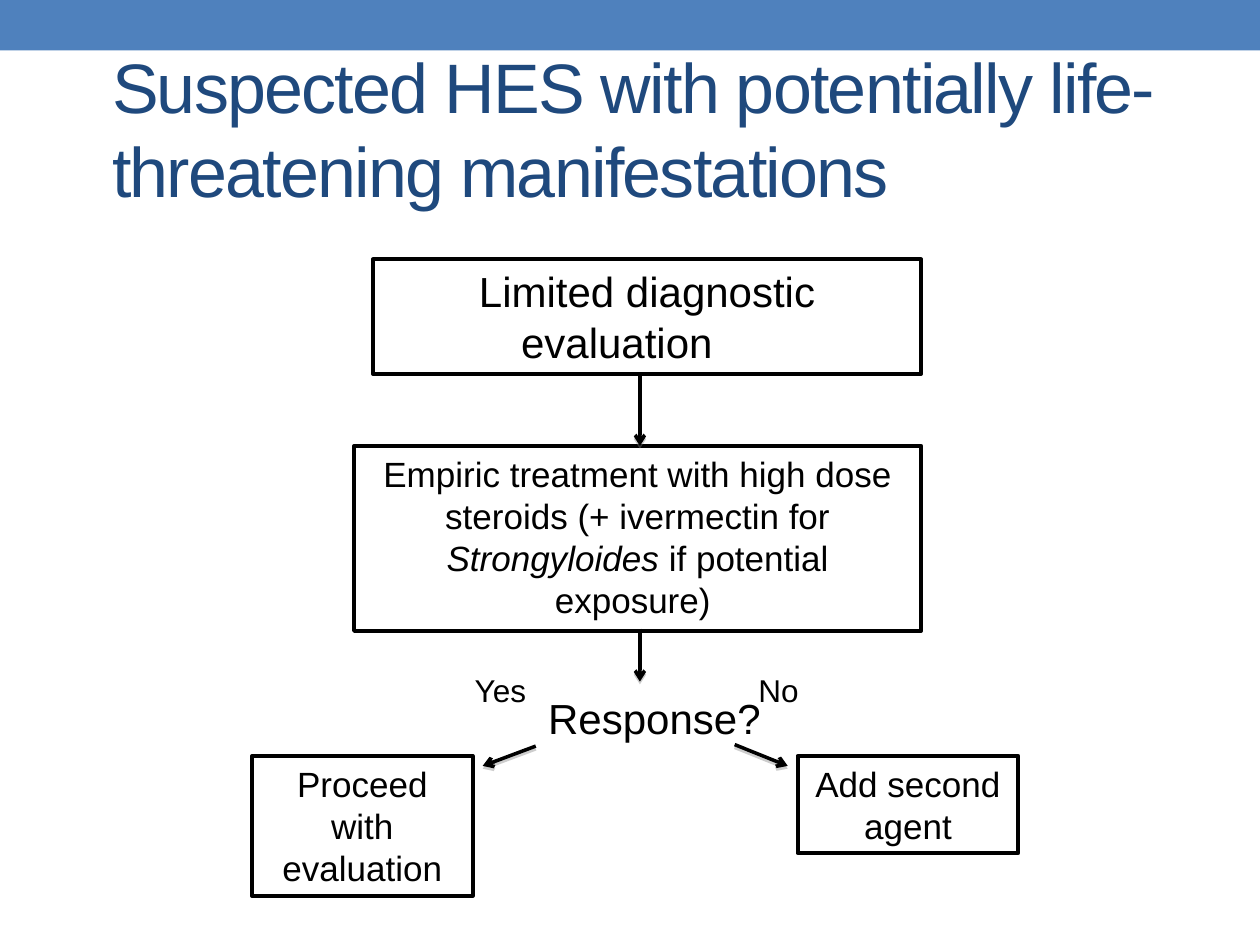
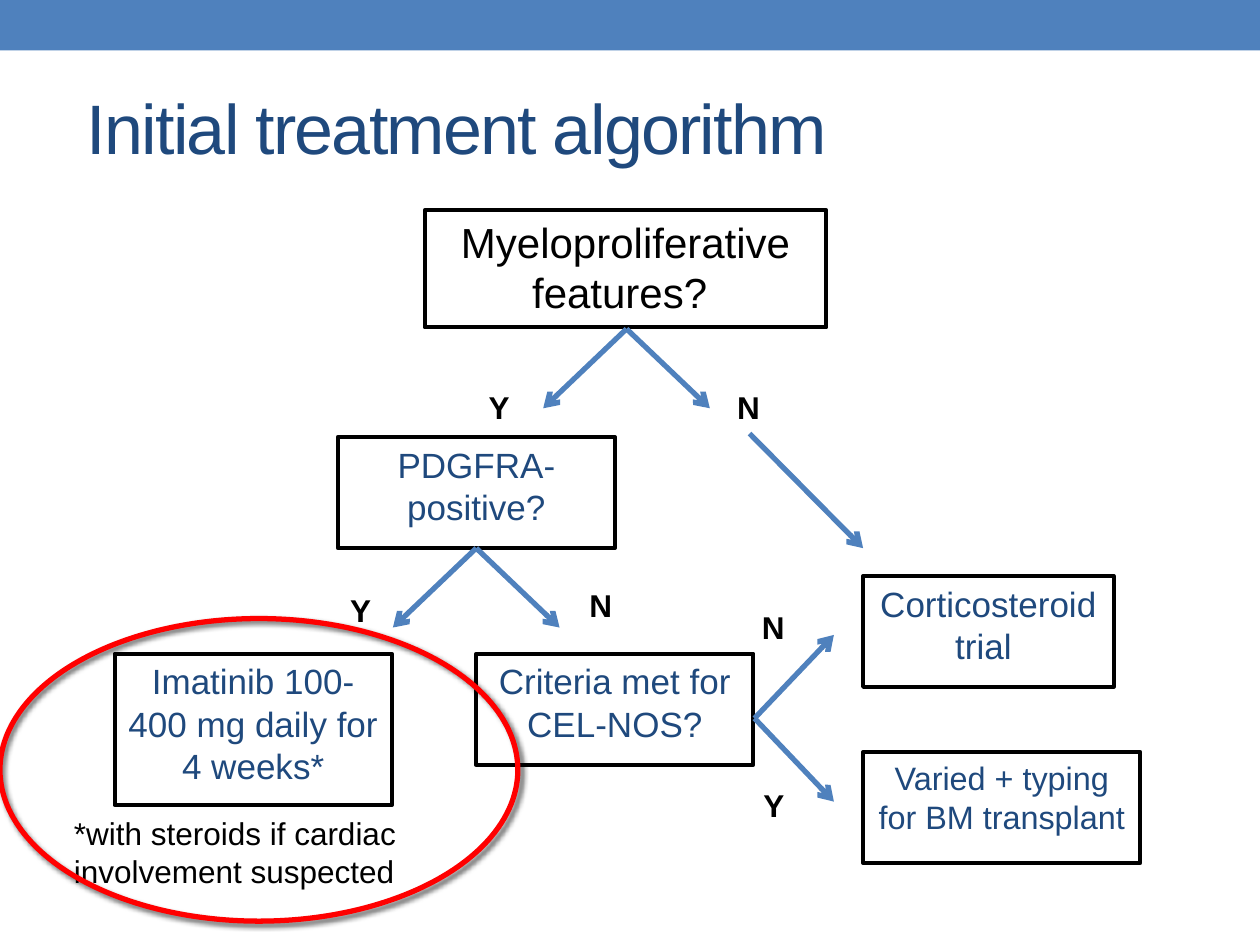
from lxml import etree
from pptx import Presentation
from pptx import util as u
from pptx.dml import color
from pptx.enum import shapes, text
from pptx.oxml import ns

# Shared look
COLORS = {"band": "4F81BD", "title": "1F497D", "ink": "000000",
          "alert": "FF0000", "soft": "808080"}
FONT = "Arial"
SLIDE_W, SLIDE_H, BAND_H = 25.4, 19.05, 1.02
BOX_W, BOX_H = 5.59, 2.24
FORK_REACH, FORK_SPREAD = 1.6, 1.68
ARROW_SHADOW = dict(hue="soft", alpha=38, blur=0, dist=1.6, angle=90)
RING_SHADOW = dict(hue="ink", alpha=60, blur=3, dist=2, angle=45)

# Slide 1: places are left, top, width, height in cm; _word_ is italic
URGENT = {
    "title": ("Suspected HES with potentially life-threatening manifestations",
              (2.01, 0.99, 21.64, 3.18)),
    "boxes": [
        ("Limited diagnostic evaluation\t", (7.52, 5.23, 11.05, 2.31), 24),
        ("Empiric treatment with high dose steroids (+ ivermectin for "
         "_Strongyloides_ if potential exposure) ", (7.14, 8.99, 11.43, 3.73), 20),
        ("Proceed with evaluation", (5.08, 15.24, 4.45, 2.82), 20),
        ("Add second agent", (16.08, 15.24, 4.45, 1.96), 20),
    ],
    "labels": [
        ("Response?", (10.8, 13.84, 4.83, 1.3), 24),
        ("Yes", (9.32, 13.41, 1.9, 1.02), 18),
        ("No", (15.04, 13.41, 1.9, 1.02), 18),
    ],
    "arrows": [
        ((12.9, 7.54), (12.9, 8.99)),
        ((12.9, 12.67), (12.9, 13.74)),
        ((10.8, 15.04), (9.73, 15.44)),
        ((14.81, 15.01), (15.88, 15.44)),
    ],
}

# Slide 2
ALGORITHM = {
    "title": ("Initial treatment algorithm", (1.5, 0.97, 18.08, 3.18)),
    "question": ("Myeloproliferative features? ", (8.56, 4.24, 8.1, 2.36), 24),
    "boxes": [
        ("PDGFRA-positive?", (6.81, 8.81, BOX_W, BOX_H), 20),
        ("Imatinib 100-400 mg daily for 4 weeks*", (2.31, 13.18, BOX_W, 3.05), 20),
        ("Criteria met for CEL-NOS?", (9.6, 13.18, BOX_W, BOX_H), 20),
        ("Corticosteroid trial ", (17.4, 11.61, 5.05, BOX_H), 20),
        ("Varied + typing for BM transplant", (17.4, 15.16, BOX_W, BOX_H), 18.5),
    ],
    "answers": [("Y", 9.6, 7.7), ("N", 14.61, 7.7), ("Y", 6.81, 11.79),
                ("N", 11.63, 11.68), ("Y", 15.14, 15.72), ("N", 15.11, 12.14)],
    "note": ("*with steroids if cardiac\ninvolvement suspected",
             (1.24, 16.28, 7.77, 1.8), 18),
    "forks": [((12.63, 6.63), "down"), ((9.6, 11.05), "down"),
              ((15.21, 14.48), "right")],
    "long_arrow": ((15.11, 8.74), (17.4, 11.05)),
    "ring": (0, 12.47, 10.44, 6.1),
}


def rgb(hue):
    return color.RGBColor.from_string(COLORS[hue])


def cm(values):
    return [u.Cm(v) for v in values]


def apply(target, values):
    for name, value in values.items():
        setattr(target, name, value)


def add_shadow(sp, hue, alpha, blur, dist, angle):
    effects = etree.SubElement(sp._element.spPr, ns.qn("a:effectLst"))
    shadow = etree.SubElement(effects, ns.qn("a:outerShdw"), {
        "blurRad": str(u.Pt(blur)), "dist": str(u.Pt(dist)),
        "dir": str(angle * 60000), "rotWithShape": "0"})
    shade = etree.SubElement(shadow, ns.qn("a:srgbClr"), val=COLORS[hue])
    etree.SubElement(shade, ns.qn("a:alpha"), val=str(alpha * 1000))


def write(sp, words, size, hue="ink", bold=False, align="LEFT", anchor="TOP",
          wrap=True, grow=False, spacing=None):
    tf = sp.text_frame
    fit = text.MSO_AUTO_SIZE
    apply(tf, {"word_wrap": wrap,
               "vertical_anchor": getattr(text.MSO_ANCHOR, anchor),
               "auto_size": fit.SHAPE_TO_FIT_TEXT if grow else fit.NONE})
    for i, line in enumerate(words.split("\n")):
        p = tf.add_paragraph() if i else tf.paragraphs[0]
        p.alignment = getattr(text.PP_ALIGN, align)
        for j, part in enumerate(line.split("_")):
            r = p.add_run()
            r.text = part
            apply(r.font, {"name": FONT, "size": u.Pt(size), "bold": bold,
                           "italic": j % 2 == 1})
            r.font.color.rgb = rgb(hue)
            if spacing:
                r._r.get_or_add_rPr().set("spc", str(spacing))


def add_outline(s, kind, place, hue, width):
    sp = s.shapes.add_shape(kind, *cm(place))
    sp.fill.background()
    sp.line.color.rgb = rgb(hue)
    sp.line.width = u.Pt(width)
    return sp


def add_box(s, words, place, size, **style):
    sp = add_outline(s, shapes.MSO_SHAPE.RECTANGLE, place, "ink", 2.25)
    sp.shadow.inherit = False
    write(sp, words, size, align="CENTER", **style)


def add_label(s, words, place, size, **style):
    write(s.shapes.add_textbox(*cm(place)), words, size, **style)


def add_arrow(s, start, end, hue, width, shadow=None):
    sp = s.shapes.add_connector(shapes.MSO_CONNECTOR.STRAIGHT, *cm(start + end))
    sp.line.color.rgb = rgb(hue)
    sp.line.width = u.Pt(width)
    etree.SubElement(sp.line._get_or_add_ln(), ns.qn("a:tailEnd"), type="arrow")
    if shadow:
        add_shadow(sp, **shadow)
    else:
        etree.SubElement(sp._element.spPr, ns.qn("a:effectLst"))


def add_fork(s, apex, direction):
    x, y = apex
    for side in (-FORK_SPREAD, FORK_SPREAD):
        dx, dy = (side, FORK_REACH) if direction == "down" else (FORK_REACH, side)
        add_arrow(s, apex, (x + dx, y + dy), "band", 3)


def add_slide(prs, title, place):
    s = prs.slides.add_slide(prs.slide_layouts[6])
    band = s.shapes.add_shape(shapes.MSO_SHAPE.RECTANGLE,
                              *cm((0, 0, SLIDE_W, BAND_H)))
    band.shadow.inherit = False
    band.fill.solid()
    band.fill.fore_color.rgb = rgb("band")
    band.line.fill.background()
    add_label(s, title, place, 40, hue="title", anchor="MIDDLE", spacing=-100)
    return s


def build_urgent(prs):
    s = add_slide(prs, *URGENT["title"])
    for box in URGENT["boxes"]:
        add_box(s, *box, grow=True)
    for label in URGENT["labels"]:
        add_label(s, *label, wrap=False, grow=True)
    for start, end in URGENT["arrows"]:
        add_arrow(s, start, end, "ink", 2, ARROW_SHADOW)


def build_algorithm(prs):
    s = add_slide(prs, *ALGORITHM["title"])
    add_box(s, *ALGORITHM["question"])
    for box in ALGORITHM["boxes"]:
        add_box(s, *box, hue="title")
    for letter, x, y in ALGORITHM["answers"]:
        width = 0.91 if letter == "Y" else 0.99
        add_label(s, letter, (x, y, width, 1.02), 18, bold=True,
                  wrap=False, grow=True)
    add_label(s, *ALGORITHM["note"], wrap=False, grow=True)
    for fork in ALGORITHM["forks"]:
        add_fork(s, *fork)
    add_arrow(s, *ALGORITHM["long_arrow"], "band", 3)
    # Ring around the first-choice drug
    ring = add_outline(s, shapes.MSO_SHAPE.OVAL, ALGORITHM["ring"], "alert", 3)
    add_shadow(ring, **RING_SHADOW)


def main():
    prs = Presentation()
    apply(prs, {"slide_width": u.Cm(SLIDE_W), "slide_height": u.Cm(SLIDE_H)})
    build_urgent(prs)
    build_algorithm(prs)
    prs.save("out.pptx")


if __name__ == "__main__":
    main()
